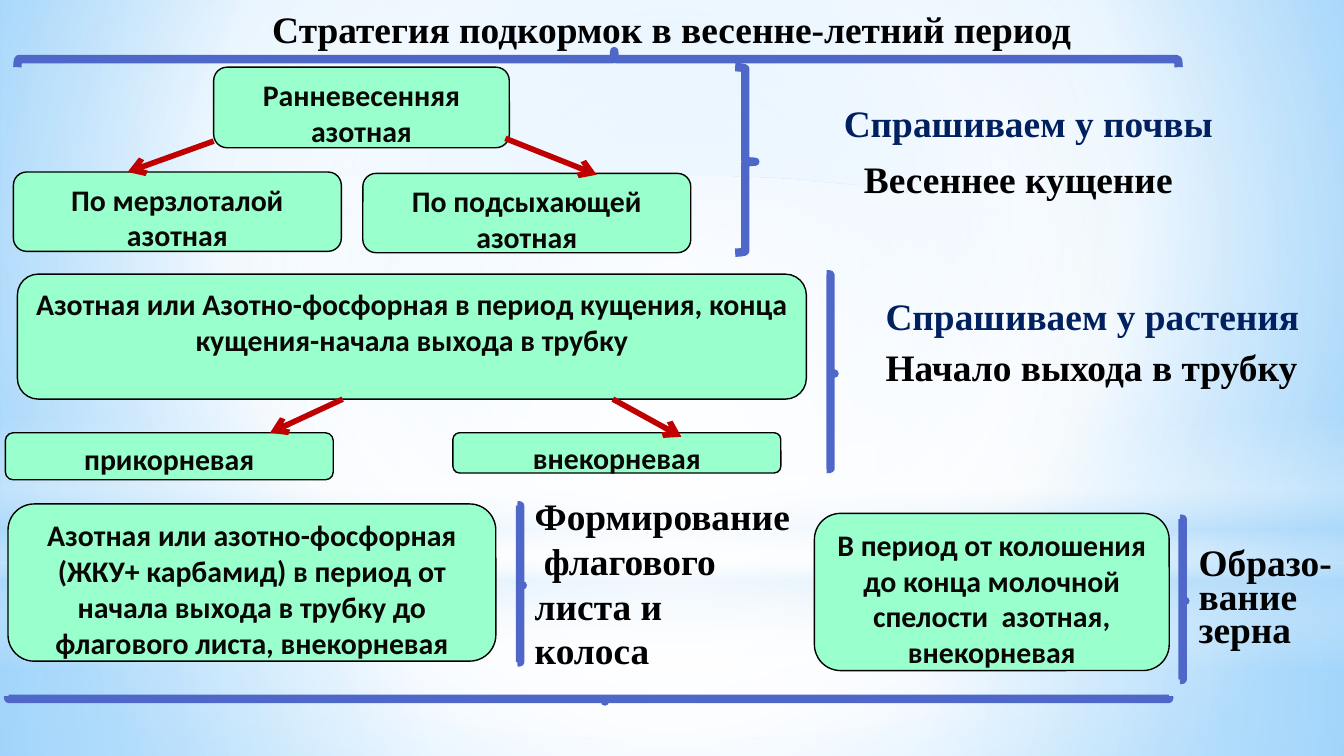
from lxml import etree
from pptx import Presentation
from pptx.dml.color import RGBColor
from pptx.enum.shapes import MSO_CONNECTOR, MSO_SHAPE as SHAPE
from pptx.enum.text import MSO_ANCHOR, MSO_AUTO_SIZE, PP_ALIGN as ALIGN
from pptx.oxml.ns import qn
from pptx.util import Inches, Pt

COLORS = {
    "box": "99FFCC", "outline": "000000", "box_text": "090807",
    "arrow": "C00000", "brace": "4E67C8", "heading": "002060",
    "text": "000000", "sky": "9ED5FF", "deep": "5BB9FF",
    "white": "FFFFFF", "pale": "B4DCFA",
}
BOX_FONT = {"name": "Calibri", "size": Pt(16), "bold": True}
LABEL_FONT = {"name": "Times New Roman", "size": Pt(20), "bold": True}
CENTER = (50, 50, 50, 50)


def rgb(name):
    return RGBColor.from_string(COLORS[name])


def set_gradient(fill, props, stops, focus=None):
    """Stops are (position, colour, opacity); focus gives a circular gradient."""
    fill.gradient()
    grad = props.find(qn("a:gradFill"))
    for child in list(grad):
        grad.remove(child)
    stop_list = etree.SubElement(grad, qn("a:gsLst"))
    for pos, color, opacity in stops:
        gs = etree.SubElement(stop_list, qn("a:gs"), pos=str(pos * 1000))
        clr = etree.SubElement(gs, qn("a:srgbClr"), val=COLORS[color])
        if opacity < 100:
            etree.SubElement(clr, qn("a:alpha"), val=str(opacity * 1000))
    if focus:
        circle = etree.SubElement(grad, qn("a:path"), path="circle")
        sides = {k: str(v * 1000) for k, v in zip("ltrb", focus)}
        etree.SubElement(circle, qn("a:fillToRect"), **sides)
    else:
        etree.SubElement(grad, qn("a:lin"), ang="5400000", scaled="0")


def add_background(slide):
    fill = slide.background.fill
    fill.solid()
    props = slide.element.cSld.find(qn("p:bg")).find(qn("p:bgPr"))
    set_gradient(fill, props, [(0, "sky", 100), (60, "white", 100), (100, "deep", 100)],
                 (20, 10, 20, 60))
    layers = [
        (SHAPE.RECTANGLE, 4.19, 1.44,
         [(0, "white", 91), (37, "white", 76), (100, "pale", 79)], CENTER),
        (SHAPE.RECTANGLE, 0, 4.19,
         [(0, "white", 89), (48, "white", 62), (100, "pale", 79)], CENTER),
        (SHAPE.RECTANGLE, 3.09, 1.88,
         [(0, "white", 0), (29, "white", 30), (45, "pale", 40), (55, "white", 26),
          (65, "pale", 60), (100, "white", 0)], None),
        (SHAPE.OVAL, 1.31, 4.19, [(0, "white", 100), (56, "white", 0)], CENTER),
    ]
    for kind, y, h, stops, focus in layers:
        sp = slide.shapes.add_shape(kind, 0, Inches(y), Inches(10), Inches(h))
        sp.shadow.inherit = False
        sp.line.fill.background()
        set_gradient(sp.fill, sp.element.spPr, stops, focus)


def write(tf, lines, font, color, align, spacing=None):
    for i, line in enumerate(lines):
        p = tf.paragraphs[0] if i == 0 else tf.add_paragraph()
        p.alignment = align
        if spacing:
            p.line_spacing = spacing
        r = p.add_run()
        r.text = line
        for key, value in font.items():
            setattr(r.font, key, value)
        r.font.color.rgb = rgb(color)


def add_box(slide, x, y, w, h, text):
    sp = slide.shapes.add_shape(SHAPE.ROUNDED_RECTANGLE,
                                Inches(x), Inches(y), Inches(w), Inches(h))
    sp.shadow.inherit = False
    sp.fill.solid()
    sp.fill.fore_color.rgb = rgb("box")
    sp.line.color.rgb = rgb("outline")
    sp.line.width = Pt(0.75)
    tf = sp.text_frame
    frame = {"word_wrap": True, "vertical_anchor": MSO_ANCHOR.TOP,
             "margin_left": Inches(0.07), "margin_right": Inches(0.07),
             "margin_top": Inches(0.04), "margin_bottom": Inches(0.04)}
    for key, value in frame.items():
        setattr(tf, key, value)
    write(tf, [text], BOX_FONT, "box_text", ALIGN.CENTER)


def add_label(slide, x, y, w, h, lines, color="text", align=ALIGN.LEFT,
              spacing=None, wrap=False):
    box = slide.shapes.add_textbox(Inches(x), Inches(y), Inches(w), Inches(h))
    tf = box.text_frame
    tf.word_wrap = wrap
    tf.auto_size = MSO_AUTO_SIZE.SHAPE_TO_FIT_TEXT
    write(tf, lines, LABEL_FONT, color, align, spacing)


def add_arrow(slide, x1, y1, x2, y2):
    line = slide.shapes.add_connector(MSO_CONNECTOR.STRAIGHT, Inches(x1), Inches(y1),
                                      Inches(x2), Inches(y2))
    line.line.color.rgb = rgb("arrow")
    line.line.width = Pt(3)
    props = line.element.spPr
    etree.SubElement(props.find(qn("a:ln")), qn("a:tailEnd"), type="arrow")
    etree.SubElement(props, qn("a:effectLst"))


def add_brace(slide, x, y, w, h, tip=0.51, rotation=0):
    sp = slide.shapes.add_shape(SHAPE.RIGHT_BRACE, Inches(x), Inches(y),
                                Inches(w), Inches(h))
    sp.shadow.inherit = False
    sp.adjustments[0], sp.adjustments[1] = 0.083, tip
    sp.rotation = rotation
    sp.fill.background()
    sp.line.color.rgb = rgb("brace")
    sp.line.width = Pt(4.5)


def add_flat_brace(slide, x, y, w, h, up):
    """Horizontal brace filling the box, with its tip up or down."""
    add_brace(slide, x + (w - h) / 2, y + (h - w) / 2, h, w,
              0.514 if up else 0.486, 270 if up else 90)


def add_branch_stage(slide, x, y, boxes, arrows, brace, heading, caption):
    """Parent box, two branches, brace and labels, all relative to (x, y)."""
    for dx, dy, w, h, text in boxes:
        add_box(slide, x + dx, y + dy, w, h, text)
    for x1, y1, x2, y2 in arrows:
        add_arrow(slide, x + x1, y + y1, x + x2, y + y2)
    dx, w, h = brace
    add_brace(slide, x + dx, y, w, h)
    for (dx, dy, w, h, text), color, spacing in ((heading, "heading", None),
                                                 (caption, "text", 0.75)):
        add_label(slide, x + dx, y + dy, w, h, [text], color, spacing=spacing)


def add_single_stage(slide, x, y, w, h, text, brace, label, lines, spacing=None):
    """One box with a brace and a label to its right."""
    add_box(slide, x, y, w, h, text)
    dx, dy, brace_h = brace
    add_brace(slide, x + dx, y + dy, 0.04, brace_h)
    dx, dy, label_w, label_h = label
    add_label(slide, x + dx, y + dy, label_w, label_h, lines, spacing=spacing)


def main():
    prs = Presentation()
    prs.slide_width = Inches(10)
    prs.slide_height = prs.slide_width * 9 // 16
    slide = prs.slides.add_slide(prs.slide_layouts[6])
    add_background(slide)
    add_branch_stage(
        slide, 0.1, 0.5,
        boxes=[(1.49, 0, 2.2, 0.6, "Ранневесенняя азотная"),
               (2.6, 0.79, 2.44, 0.59, "По подсыхающей азотная"),
               (0, 0.78, 2.44, 0.59, "По мерзлоталой азотная")],
        arrows=[(1.49, 0.55, 0.85, 0.78), (3.66, 0.53, 4.34, 0.8)],
        brace=(5.37, 0.15, 1.38),
        heading=(6.08, 0.2, 2.97, 0.44, "Спрашиваем у почвы"),
        caption=(6.23, 0.69, 2.59, 0.36, "Весеннее кущение"))
    add_branch_stage(
        slide, 0.04, 2.04,
        boxes=[(0.09, 0, 5.87, 0.93, "Азотная или Азотно-фосфорная в период кущения, "
                                     "конца кущения-начала выхода в трубку"),
               (0, 1.18, 2.44, 0.35, "прикорневая"),
               (3.33, 1.18, 2.44, 0.3, "внекорневая")],
        arrows=[(2.51, 0.93, 1.97, 1.18), (4.52, 0.93, 5.03, 1.21)],
        brace=(6.11, 0.06, 1.45),
        heading=(6.45, 0.09, 3.31, 0.44, "Спрашиваем у растения"),
        caption=(6.45, 0.55, 3.29, 0.35, "Начало выхода в трубку"))
    add_single_stage(
        slide, 6.06, 3.82, 2.64, 1.17,
        "В период от колошения до конца молочной спелости  азотная, внекорневая",
        brace=(2.72, 0.04, 1.2), label=(2.76, 0.22, 1.2, 0.86),
        lines=["Образо-", "вание", "зерна"], spacing=0.75)
    add_single_stage(
        slide, 0.06, 3.75, 3.63, 1.17,
        "Азотная или азотно-фосфорная (ЖКУ+ карбамид) в период от начала выхода "
        "в трубку до флагового листа, внекорневая",
        brace=(3.79, 0.01, 1.17), label=(3.82, -0.13, 2.11, 1.45),
        lines=["Формирование", " флагового", "листа и", "колоса"])
    add_flat_brace(slide, 0.13, 0.38, 8.64, 0.12, up=True)
    add_flat_brace(slide, 0.06, 5.18, 8.64, 0.04, up=False)
    add_label(slide, 0, 0, 10, 0.44, ["Стратегия подкормок в весенне-летний период"],
              align=ALIGN.CENTER, wrap=True)
    prs.save("out.pptx")


if __name__ == "__main__":
    main()
